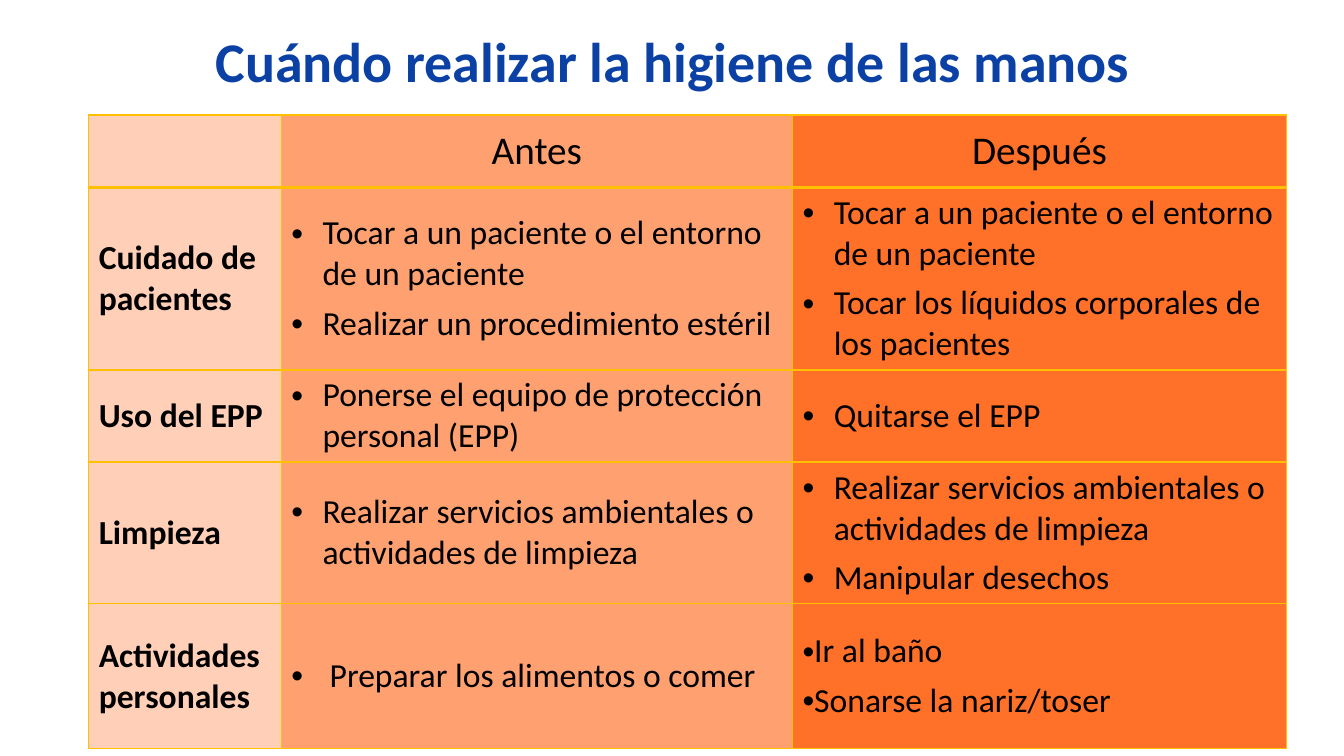
from lxml.etree import SubElement
from pptx import Presentation
from pptx.dml.color import RGBColor
from pptx.enum.text import MSO_ANCHOR, MSO_AUTO_SIZE, PP_ALIGN
from pptx.oxml import parse_xml
from pptx.oxml.ns import nsdecls, qn
from pptx.util import Inches, Pt

COLUMN_FILLS = ["FFCFB8", "FFA070", "FF7029"]
COLUMN_WIDTHS = [1.91, 5.07, 4.9]
ROW_HEIGHTS = [0.72, 1.5, 0.79, 1.35, 1.44]
BORDER = "FFC000"

HEADERS = ["", "Antes", "Después"]
TOUCH = "Tocar a un paciente o el entorno de un paciente"
CLEAN = "Realizar servicios ambientales o actividades de limpieza"

# Row label, space before, then (bullet indent, items) for each moment
ACTIVITIES = [
    ("Cuidado de pacientes", 6,
     (0.31, [TOUCH, "Realizar un procedimiento estéril"]),
     (0.31, [TOUCH, "Tocar los líquidos corporales de los pacientes"])),
    ("Uso del EPP", 0,
     (0.31, ["Ponerse el equipo de protección personal (EPP)"]),
     (0.31, ["Quitarse el EPP"])),
    ("Limpieza", 6,
     (0.31, [CLEAN]),
     (0.31, [CLEAN, "Manipular desechos"])),
    ("Actividades personales", 6,
     (0.38, ["Preparar los alimentos o comer"]),
     (0, ["Ir al baño", "Sonarse la nariz/toser"])),
]


def color(value):
    return RGBColor.from_string(value)


def write(para, text, size=24, bold=False, ink="000000", align=PP_ALIGN.LEFT,
          before=0):
    para.alignment = align
    para.space_before = Pt(before)
    span = para.add_run()
    span.text = text
    span.font.name = "Calibri"
    span.font.size = Pt(size)
    span.font.bold = bold
    span.font.color.rgb = color(ink)


def add_bullet(para, indent):
    properties = para._p.get_or_add_pPr()
    properties.set("marL", str(Inches(indent)))
    properties.set("indent", str(-Inches(indent)))
    SubElement(properties, qn("a:buFont")).set("typeface", "Arial")
    SubElement(properties, qn("a:buChar")).set("char", "•")


def write_list(cell, indent, items, before):
    frame = cell.text_frame
    for index, item in enumerate(items):
        para = frame.add_paragraph() if index else frame.paragraphs[0]
        write(para, item, before=before)
        add_bullet(para, indent)


def format_cell(cell, fill, bottom=1):
    cell.vertical_anchor = MSO_ANCHOR.MIDDLE
    cell.fill.solid()
    cell.fill.fore_color.rgb = color(fill)
    properties = cell._tc.get_or_add_tcPr()
    widths = {"lnL": 1, "lnR": 1, "lnT": 1, "lnB": bottom}
    for place, (side, width) in enumerate(widths.items()):
        properties.insert(place, parse_xml(
            f'<a:{side} {nsdecls("a")} w="{Pt(width)}"><a:solidFill>'
            f'<a:srgbClr val="{BORDER}"/></a:solidFill></a:{side}>'))


def add_title(page, text):
    title = page.shapes.title
    title.left, title.top = Inches(0.67), Inches(0.3)
    title.width, title.height = Inches(12), Inches(0.68)
    frame = title.text_frame
    frame.auto_size = MSO_AUTO_SIZE.NONE
    frame.vertical_anchor = MSO_ANCHOR.BOTTOM
    para = frame.paragraphs[0]
    para.line_spacing = Pt(40)
    write(para, text, size=40, bold=True, ink="0B41A5", align=PP_ALIGN.CENTER)


def add_grid(page):
    table = page.shapes.add_table(
        len(ROW_HEIGHTS), len(COLUMN_WIDTHS), Inches(0.88), Inches(1.14),
        Inches(sum(COLUMN_WIDTHS)), Inches(sum(ROW_HEIGHTS))).table
    table.first_row = table.horz_banding = False
    for column, width in zip(table.columns, COLUMN_WIDTHS):
        column.width = Inches(width)
    for index, (row, height) in enumerate(zip(table.rows, ROW_HEIGHTS)):
        row.height = Inches(height)
        for cell, fill in zip(row.cells, COLUMN_FILLS):
            format_cell(cell, fill, bottom=1 if index else 3)
    return table


def fill_grid(table):
    # Header row
    for column, header in enumerate(HEADERS):
        if header:
            write(table.cell(0, column).text_frame.paragraphs[0], header,
                  size=28, align=PP_ALIGN.CENTER)
    # Activity rows
    for row, (label, before, *moments) in enumerate(ACTIVITIES, start=1):
        write(table.cell(row, 0).text_frame.paragraphs[0], label, bold=True)
        for column, (indent, items) in enumerate(moments, start=1):
            write_list(table.cell(row, column), indent, items, before)


def main():
    deck = Presentation()
    deck.slide_width, deck.slide_height = Inches(13.33), Inches(7.5)
    page = deck.slides.add_slide(deck.slide_layouts[5])
    add_title(page, "Cuándo realizar la higiene de las manos")
    fill_grid(add_grid(page))
    deck.save("out.pptx")


if __name__ == "__main__":
    main()
